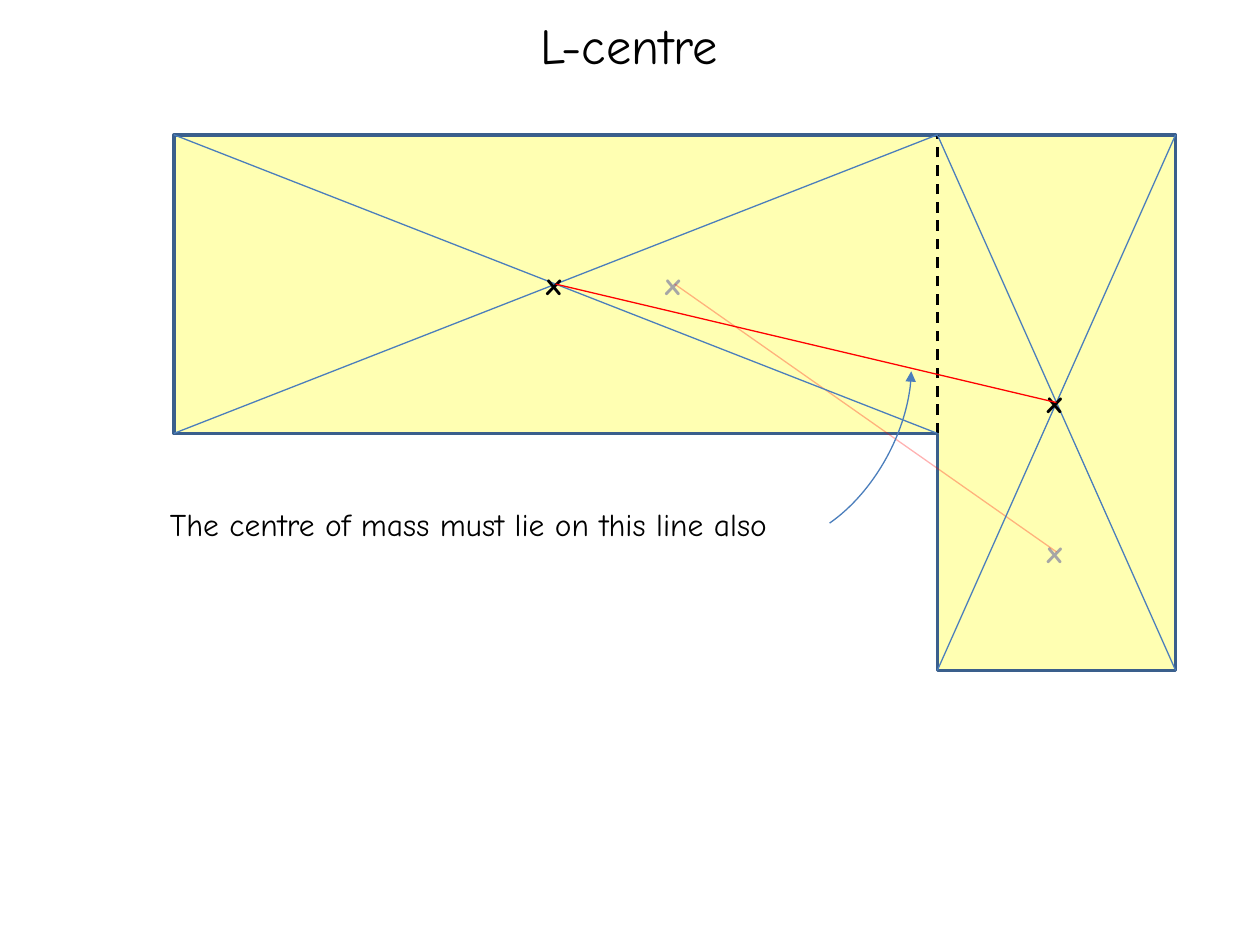
from lxml.etree import SubElement as Sub
from pptx import Presentation
from pptx.dml.color import RGBColor as Rgb
from pptx.enum.dml import MSO_LINE as Dash
from pptx.enum.shapes import MSO_CONNECTOR as Link, MSO_SHAPE as Form
from pptx.enum.text import MSO_ANCHOR as Anchor, MSO_AUTO_SIZE as Auto, PP_ALIGN as Align
from pptx.oxml.ns import qn
from pptx.util import Inches, Pt

COLS, ROWS = 100, 75
CELL = Inches(0.1)
FONT = "Comic Neue"
HUES = {"edge": "3A5F8C", "thin": "4B7EBC", "fill": "FFFF00", "join": "FF0000",
        "ink": "000000", "dim": "A6A6A6"}


def grid(*vals):
    """Turn grid units into slide lengths."""
    return [round(v * CELL) for v in vals]


def mid(box):
    """Return the centre of a box."""
    x, y, w, h = box
    return x + w / 2, y + h / 2


def fade(fill, share):
    """Set the opacity of a solid fill element, in percent."""
    Sub(fill.find(qn("a:srgbClr")), qn("a:alpha"), val=str(share * 1000))


def pen(line, hue, size):
    """Set the colour and width of a line."""
    line.color.rgb = Rgb.from_string(HUES[hue])
    line.width = Pt(size)


def rule(slide, start, end, hue="thin", size=0.75, dash=None, share=None):
    """Draw a straight line between two grid points."""
    link = slide.shapes.add_connector(Link.STRAIGHT, *grid(*start, *end))
    pen(link.line, hue, size)
    if dash:
        link.line.dash_style = dash
    prop = link._element.spPr
    if share:
        fade(prop.find(qn("a:ln")).find(qn("a:solidFill")), share)
    Sub(prop, qn("a:effectLst"))


def label(slide, box, text, size=18, hue="ink", bold=False, wrap=True):
    """Add a one-run text box and return its frame."""
    frame = slide.shapes.add_textbox(*grid(*box)).text_frame
    frame.word_wrap = wrap
    frame.auto_size = Auto.SHAPE_TO_FIT_TEXT
    run = frame.paragraphs[0].add_run()
    run.text = text
    font = run.font
    font.name, font.size, font.bold = FONT, Pt(size), bold
    font.color.rgb = Rgb.from_string(HUES[hue])
    return frame


def title(slide, box):
    """Place the centred heading."""
    frame = label(slide, box, "L-centre", 28.8)
    frame.auto_size = Auto.NONE
    frame.vertical_anchor = Anchor.MIDDLE
    frame.paragraphs[0].alignment = Align.CENTER


def plate(slide, box, arm, leg):
    """Draw the L-shaped plate with its arm and leg sizes."""
    x, y, w, h = box
    fold, step, right, base = x + arm, y + leg, x + w, y + h
    pts = [(right, y), (right, base), (fold, base), (fold, step), (x, step)]
    form = slide.shapes.build_freeform(*grid(x, y), scale=1.0)
    form.add_line_segments([grid(*p) for p in pts], close=True)
    shape = form.convert_to_shape()
    shape.shadow.inherit = False
    shape.fill.solid()
    shape.fill.fore_color.rgb = Rgb.from_string(HUES["fill"])
    fade(shape._element.spPr.find(qn("a:solidFill")), 30)
    pen(shape.line, "edge", 2)


def cross(slide, box):
    """Draw both diagonals of a box."""
    x, y, w, h = box
    rule(slide, (x, y), (x + w, y + h))
    rule(slide, (x, y + h), (x + w, y))


def pair(slide, ends, hue, share=None):
    """Mark two centres and join them."""
    for x, y in ends:
        label(slide, (x - 1.75, y - 2.1, 3.5, 4), "x", hue=hue, bold=True, wrap=False)
    rule(slide, *ends, hue="join", share=share)


def plan(slide, box, arm, leg):
    """Build the plate, its two splits and their centre lines."""
    x, y, w, h = box
    fold = x + arm
    left, tall = (x, y, arm, leg), (fold, y, w - arm, h)
    top, low = (x, y, w, leg), (fold, y + leg, w - arm, h - leg)
    plate(slide, box, arm, leg)
    pair(slide, (mid(top), mid(low)), "dim", 30)
    rule(slide, (fold, y + leg), (fold, y), "ink", 1.5, Dash.DASH)
    for part in (left, tall):
        cross(slide, part)
    pair(slide, (mid(left), mid(tall)), "ink")


def note(slide, box):
    """Place the caption and the curved arrow to its right."""
    x, y, w, h = box
    arc = slide.shapes.add_shape(Form.ARC, *grid(x + 41.5, y - 12.9, 21.3, 13))
    arc.shadow.inherit = False
    arc.rotation = 118.8
    arc.adjustments[0], arc.adjustments[1] = 129.12, 193.85
    arc.fill.background()
    pen(arc.line, "thin", 0.75)
    Sub(arc._element.spPr.find(qn("a:ln")), qn("a:headEnd"), type="triangle")
    label(slide, box, "The centre of mass must lie on this line also")


def main():
    """Build and save the slide."""
    deck = Presentation()
    deck.slide_width, deck.slide_height = grid(COLS, ROWS)
    slide = deck.slides.add_slide(deck.slide_layouts[6])
    plan(slide, (13.8, 10.7, 79.5, 42.5), 60.6, 23.7)
    title(slide, (37.3, 0.5, 25.3, 6.1))
    note(slide, (12.5, 39.6, 53.8, 4))
    deck.save("out.pptx")


if __name__ == "__main__":
    main()
